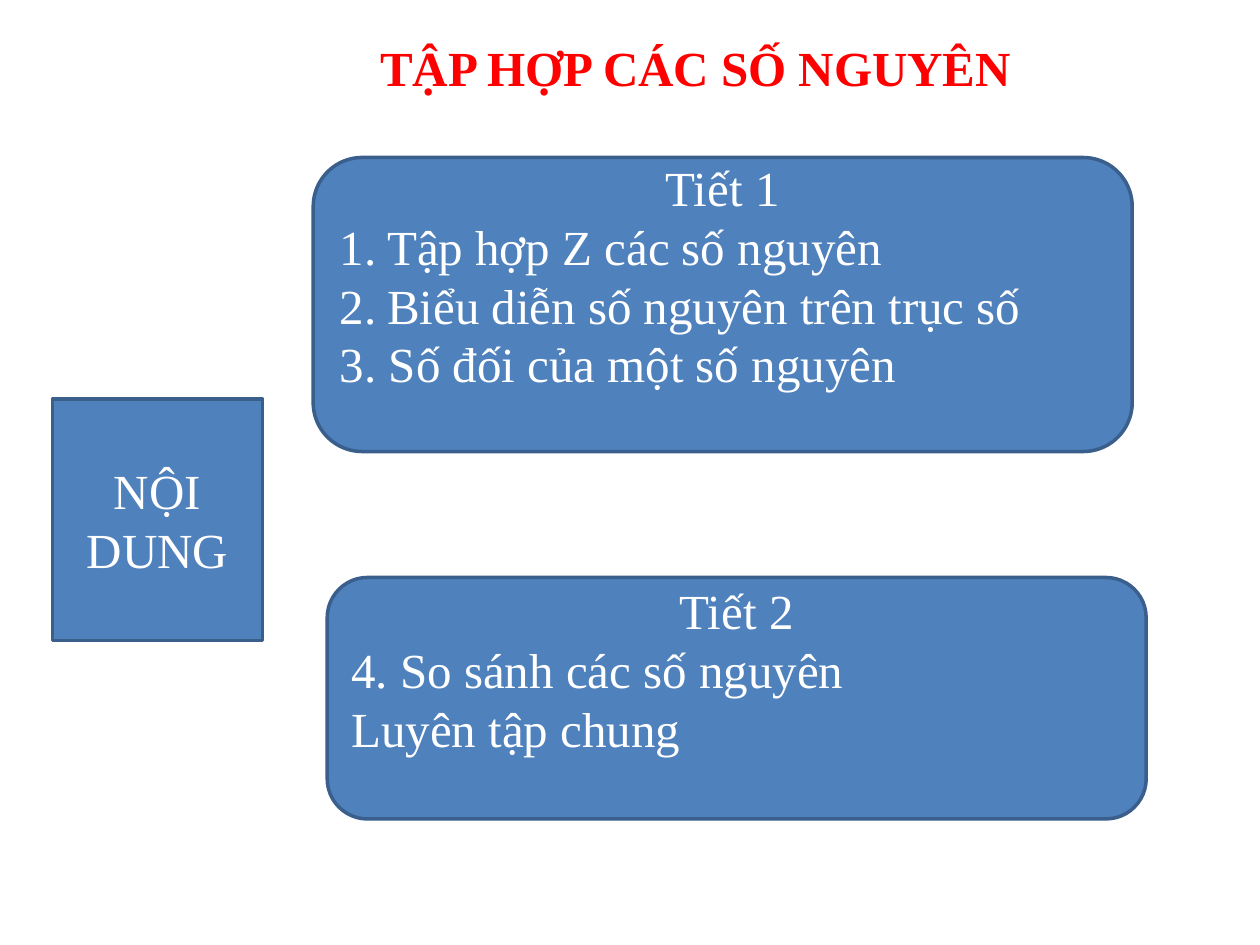
"""Build the lesson outline slide on the set of integers."""
from dataclasses import dataclass

from lxml import etree
from pptx import Presentation
from pptx.dml.color import RGBColor
from pptx.enum import shapes, text
from pptx.oxml import ns
from pptx.util import Pt

RED = RGBColor(0xFF, 0x00, 0x00)
WHITE = RGBColor(0xFF, 0xFF, 0xFF)
BLUE = RGBColor(0x4F, 0x81, 0xBD)
DARK_BLUE = RGBColor(0x3A, 0x5F, 0x8C)
FONT = "Times New Roman"
FONT_SIZE = 28
INSET = 3.6
LINE_HEIGHT = 33.5
NUMBER_INDENT = 27


@dataclass(frozen=True)
class Line:
    content: str
    centered: bool = False
    numbered: bool = False


@dataclass(frozen=True)
class Box:
    kind: shapes.MSO_SHAPE
    left: float
    top: float
    width: float
    height: float
    lines: tuple[Line, ...]
    space_below: float = 0


BOXES = (
    Box(shapes.MSO_SHAPE.RECTANGLE, 30, 228, 120, 138, (Line("NỘI DUNG", centered=True),)),
    Box(shapes.MSO_SHAPE.ROUNDED_RECTANGLE, 179, 90, 468, 168, (
        Line("Tiết 1", centered=True),
        Line("Tập hợp Z các số nguyên", numbered=True),
        Line("Biểu diễn số nguyên trên trục số", numbered=True),
        Line("3. Số đối của một số nguyên"),
    ), LINE_HEIGHT),
    Box(shapes.MSO_SHAPE.ROUNDED_RECTANGLE, 187, 330, 468, 138, (
        Line("Tiết 2", centered=True),
        Line("4. So sánh các số nguyên"),
        Line("Luyên tập chung"),
    ), LINE_HEIGHT),
)


def write(paragraph, content: str, *, color: RGBColor = WHITE, bold: bool = False,
          centered: bool = False, numbered: bool = False) -> None:
    """Write one formatted paragraph."""
    paragraph.alignment = text.PP_ALIGN.CENTER if centered else text.PP_ALIGN.LEFT
    run = paragraph.add_run()
    run.text = content
    run.font.name = FONT
    run.font.size = Pt(FONT_SIZE)
    run.font.bold = bold
    run.font.color.rgb = color
    if numbered:
        properties = paragraph._p.get_or_add_pPr()
        properties.set("marL", str(Pt(NUMBER_INDENT)))
        properties.set("indent", str(-Pt(NUMBER_INDENT)))
        etree.SubElement(properties, ns.qn("a:buAutoNum"), type="arabicPeriod")


def draw_title(slide, content: str) -> None:
    """Place and fill the title placeholder."""
    title = slide.shapes.title
    title.left, title.top, title.width, title.height = Pt(210), Pt(18), Pt(379.5), Pt(41)
    frame = title.text_frame
    frame.word_wrap = False
    frame.auto_size = text.MSO_AUTO_SIZE.SHAPE_TO_FIT_TEXT
    frame.vertical_anchor = text.MSO_ANCHOR.TOP
    write(frame.paragraphs[0], content, color=RED, bold=True)


def draw_box(slide, box: Box) -> None:
    """Draw one filled box with its lines of text."""
    shape = slide.shapes.add_shape(
        box.kind, Pt(box.left), Pt(box.top), Pt(box.width), Pt(box.height))
    shape.shadow.inherit = False
    shape.fill.solid()
    shape.fill.fore_color.rgb = BLUE
    shape.line.color.rgb = DARK_BLUE
    shape.line.width = Pt(2)
    frame = shape.text_frame
    frame.word_wrap = True
    frame.vertical_anchor = text.MSO_ANCHOR.MIDDLE
    frame.margin_bottom = Pt(INSET + box.space_below)
    for index, line in enumerate(box.lines):
        paragraph = frame.add_paragraph() if index else frame.paragraphs[0]
        write(paragraph, line.content, centered=line.centered, numbered=line.numbered)


def main() -> None:
    """Build and save the presentation."""
    presentation = Presentation()
    presentation.slide_width, presentation.slide_height = Pt(720), Pt(540)
    slide = presentation.slides.add_slide(presentation.slide_layouts.get_by_name("Title Only"))
    draw_title(slide, "TẬP HỢP CÁC SỐ NGUYÊN")
    for box in BOXES:
        draw_box(slide, box)
    presentation.save("out.pptx")


if __name__ == "__main__":
    main()
